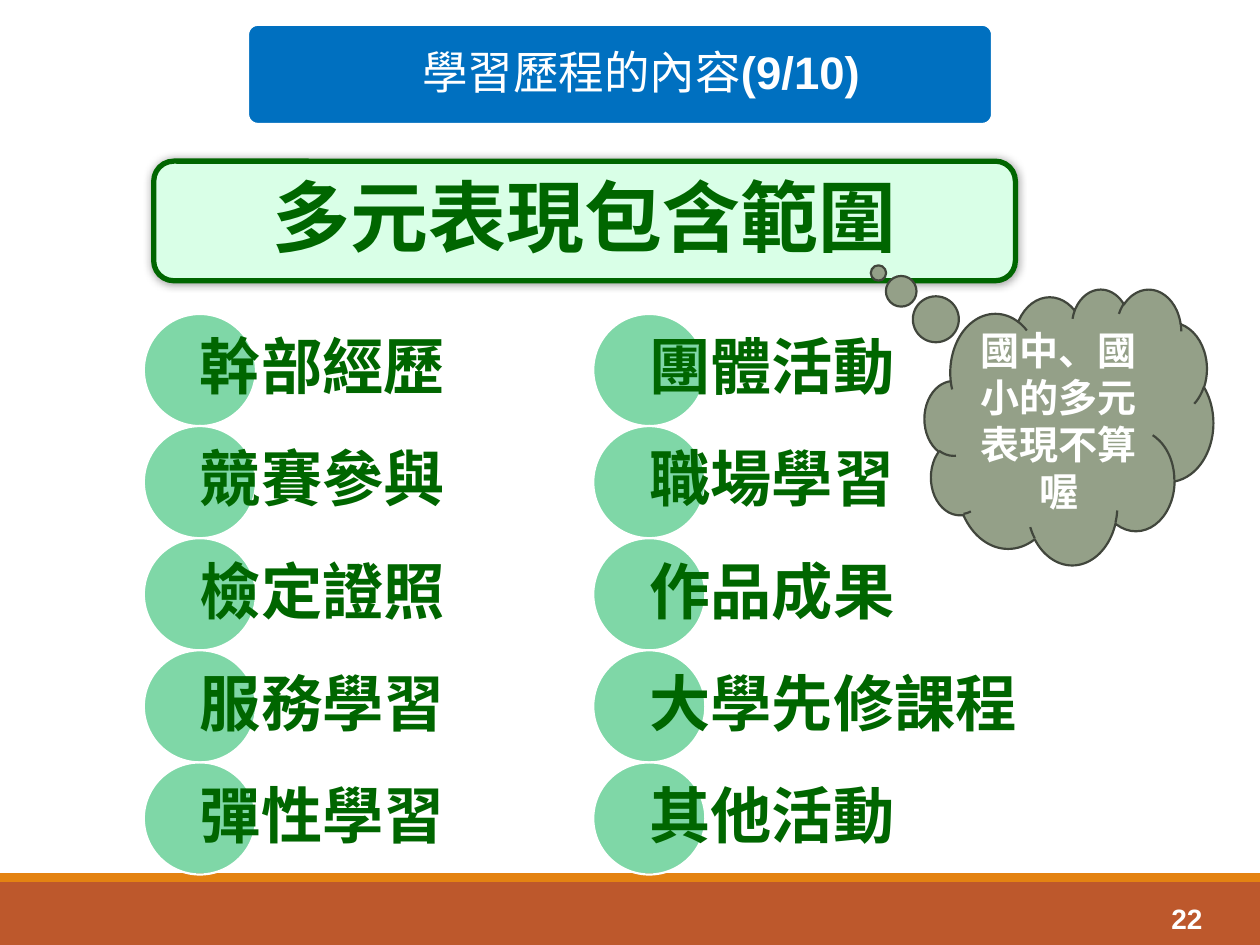
from lxml.etree import SubElement
from pptx import Presentation
from pptx.dml.color import RGBColor
from pptx.enum.shapes import MSO_SHAPE
from pptx.enum.text import MSO_ANCHOR, PP_ALIGN
from pptx.oxml.ns import qn
from pptx.util import Cm, Pt

TITLE = "學習歷程的內容"
TITLE_COUNT = "(9/10)"
HEADING = "多元表現包含範圍"
COLUMNS = [
    (2.9, ["幹部經歷", "競賽參與", "檢定證照", "服務學習", "彈性學習"]),
    (11.96, ["團體活動", "職場學習", "作品成果", "大學先修課程", "其他活動"]),
]
REMARK = "國中、國小的多元表現不算喔"
PAGE_NUMBER = "22"

CJK_FONT = "Noto Sans CJK SC"
DARK_GREEN = "006600"
WHITE = "FFFFFF"
LIST_TOP = 6.33
CIRCLE_SIZE = 2.26
LABEL_WIDTH = 12.07


def color(value):
    return RGBColor.from_string(value)


def add_shape(shapes, kind, box, fill, line=None, line_width=1.25):
    shape = shapes.add_shape(kind, *map(Cm, box))
    shape.shadow.inherit = False
    shape.fill.solid()
    shape.fill.fore_color.rgb = color(fill)
    if line:
        shape.line.color.rgb = color(line)
        shape.line.width = Pt(line_width)
    else:
        shape.line.fill.background()
    return shape


def add_effect(parent, tag, **attributes):
    return SubElement(parent, qn(tag), attributes)


def style_font(font, properties, size, value, name=CJK_FONT, bold=True):
    font.size = Pt(size)
    font.bold = bold
    font.color.rgb = color(value)
    font.name = name
    add_effect(properties, "a:ea", typeface=name)


def prepare_frame(shape, align, margins):
    frame = shape.text_frame
    frame.word_wrap = True
    frame.vertical_anchor = MSO_ANCHOR.MIDDLE
    frame.margin_left, frame.margin_top, frame.margin_right, frame.margin_bottom = map(Cm, margins)
    paragraph = frame.paragraphs[0]
    paragraph.alignment = align
    return paragraph


def write_text(shape, text, size, value, align=PP_ALIGN.LEFT,
               margins=(0.25, 0.13, 0.25, 0.13), spacing=None, name=CJK_FONT):
    paragraph = prepare_frame(shape, align, margins)
    paragraph.line_spacing = spacing
    paragraph.add_run().text = text
    font = paragraph.font
    style_font(font, paragraph._p.pPr.find(qn("a:defRPr")), size, value, name)


def add_list(slide, left, labels):
    group = slide.shapes.add_group_shape()
    for row, label in enumerate(labels):
        top = LIST_TOP + row * CIRCLE_SIZE
        circle = add_shape(group.shapes, MSO_SHAPE.OVAL,
                           (left, top, CIRCLE_SIZE, CIRCLE_SIZE), "00B050", WHITE)
        fill = circle._element.spPr.find(qn("a:solidFill"))
        add_effect(fill[0], "a:alpha", val="50000")
        box = (left + CIRCLE_SIZE / 2, top, LABEL_WIDTH, CIRCLE_SIZE)
        text_box = group.shapes.add_textbox(*map(Cm, box))
        write_text(text_box, label, 35, DARK_GREEN, margins=(0, 0.13, 0, 0.13), spacing=0.9)


def add_heading(slide):
    heading = add_shape(slide.shapes, MSO_SHAPE.ROUNDED_RECTANGLE,
                        (3.1, 3.25, 17.37, 2.41), "D9FFE7", DARK_GREEN, 3)
    effects = heading._element.spPr.find(qn("a:effectLst"))
    shadow = add_effect(effects, "a:outerShdw", blurRad=str(Pt(5)), dist="0", dir="0")
    shadow_color = add_effect(shadow, "a:srgbClr", val="000000")
    add_effect(shadow_color, "a:alpha", val="40000")
    write_text(heading, HEADING, 44.5, DARK_GREEN, PP_ALIGN.CENTER, (0.48,) * 4, 0.9)


def add_title(slide):
    title = add_shape(slide.shapes, MSO_SHAPE.ROUNDED_RECTANGLE,
                      (5, 0.5, 15, 2), "0070C0", WHITE)
    title.adjustments[0] = 0.1
    paragraph = prepare_frame(title, PP_ALIGN.LEFT, (3.45, 0.28, 0.28, 0.28))
    paragraph.line_spacing = 0.9
    for text, name, bold in [(TITLE, CJK_FONT, False), (TITLE_COUNT, "Arial", True)]:
        run = paragraph.add_run()
        run.text = text
        style_font(run.font, run._r.get_or_add_rPr(), 26, WHITE, name, bold)


def main():
    presentation = Presentation()
    presentation.slide_width = Cm(25.4)
    presentation.slide_height = Cm(19.05)
    slide = presentation.slides.add_slide(presentation.slide_layouts[6])

    add_shape(slide.shapes, MSO_SHAPE.RECTANGLE, (0, 17.78, 25.4, 1.27), "BD582C")
    add_shape(slide.shapes, MSO_SHAPE.RECTANGLE, (0, 17.6, 25.4, 0.18), "E48312")
    number = slide.shapes.add_textbox(Cm(22), Cm(18.01), Cm(2.49), Cm(1))
    write_text(number, PAGE_NUMBER, 16, WHITE, PP_ALIGN.RIGHT, name="Arial")

    add_heading(slide)
    for left, labels in COLUMNS:
        add_list(slide, left, labels)

    cloud = add_shape(slide.shapes, MSO_SHAPE.CLOUD_CALLOUT,
                      (18.64, 5.82, 5.82, 5.56), "94A088", "41463C")
    cloud.adjustments[0] = -0.66
    cloud.adjustments[1] = -0.557
    write_text(cloud, REMARK, 22.3, WHITE, PP_ALIGN.CENTER)

    add_title(slide)
    presentation.save("out.pptx")


if __name__ == "__main__":
    main()
